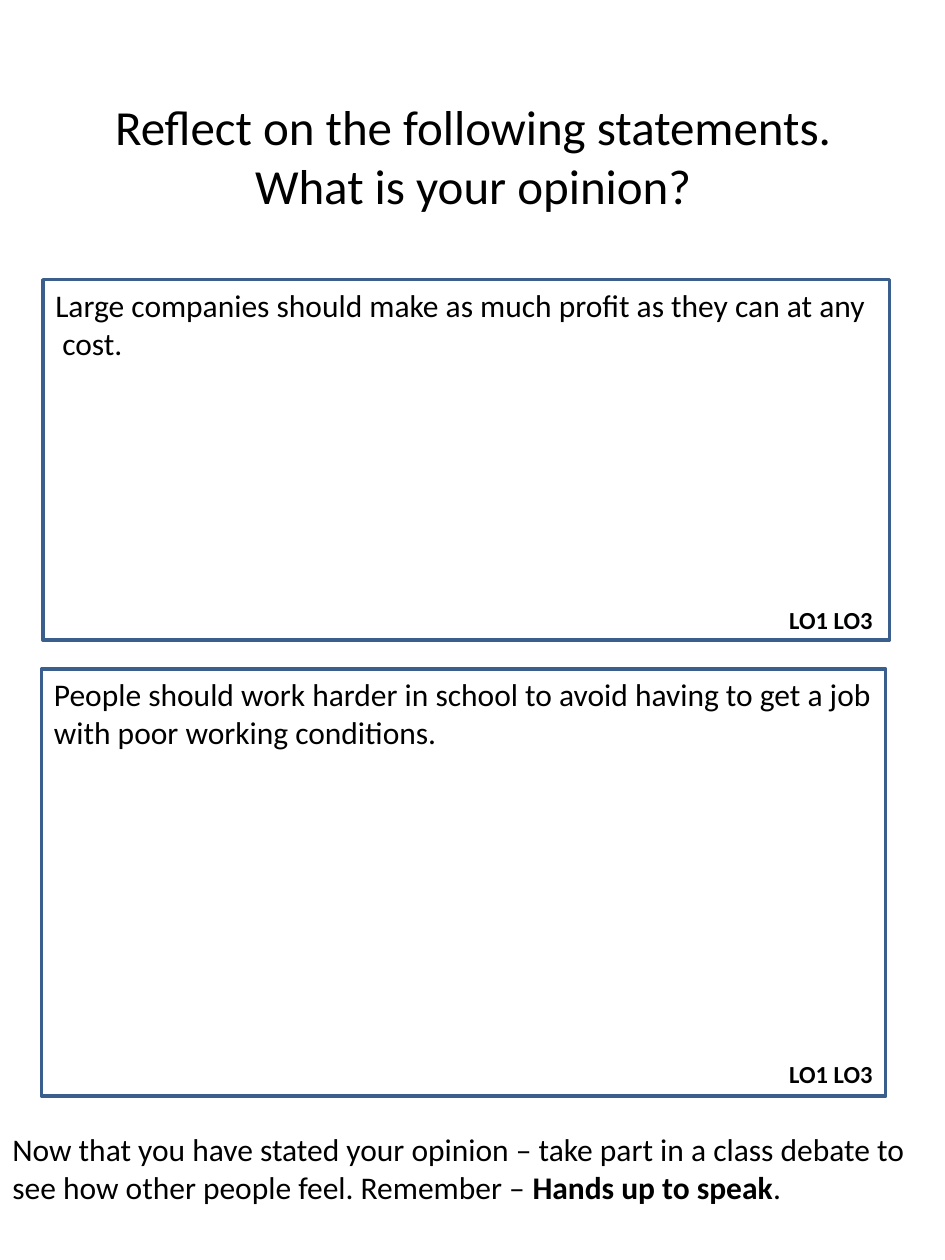
from pptx import Presentation
from pptx.dml.color import RGBColor
from pptx.enum import shapes, text
from pptx.util import Inches, Pt

COLORS = {"border": "3A5F8C", "ink": "000000"}
FONT = "Calibri"
TAG_LEFT, TAG_WIDTH, TAG_HEIGHT = 6.16, 0.87, 0.34

# frame box, statement lines, top of the tag
STATEMENTS = [
    ((0.34, 2.22, 6.72, 2.86),
     ["Large companies should make as much profit as they can at any",
      " cost."], 4.75),
    ((0.33, 5.31, 6.7, 3.39),
     ["People should work harder in school to avoid having to get a job",
      "with poor working conditions."], 8.36),
]
CLOSING = [
    [("Now that you have stated your opinion – take part in a class debate to", False)],
    [("see how other people feel. Remember – ", False),
     ("Hands up to speak", True), (".", False)],
]


def inches(box):
    return [Inches(v) for v in box]


def format_run(r, size, bold=False):
    r.font.name = FONT
    r.font.size = Pt(size)
    r.font.bold = bold
    r.font.color.rgb = RGBColor.from_string(COLORS["ink"])


def add_title(slide, box, title):
    sp = slide.shapes.title
    sp.left, sp.top, sp.width, sp.height = inches(box)
    tf = sp.text_frame
    tf.text = title
    tf.word_wrap = True
    tf.vertical_anchor = text.MSO_ANCHOR.MIDDLE
    p = tf.paragraphs[0]
    p.alignment = text.PP_ALIGN.CENTER
    format_run(p.runs[0], 28)


def add_frame(slide, box):
    sp = slide.shapes.add_shape(shapes.MSO_SHAPE.RECTANGLE, *inches(box))
    sp.shadow.inherit = False
    sp.fill.background()
    sp.line.color.rgb = RGBColor.from_string(COLORS["border"])
    sp.line.width = Pt(2)


def add_text(slide, box, lines, size=18, align=text.PP_ALIGN.LEFT):
    """Add a text box; each line is a list of (wording, bold) pairs."""
    tf = slide.shapes.add_textbox(*inches(box)).text_frame
    tf.word_wrap = False
    for i, line in enumerate(lines):
        p = tf.add_paragraph() if i else tf.paragraphs[0]
        p.alignment = align
        for wording, bold in line:
            r = p.add_run()
            r.text = wording
            format_run(r, size, bold)


def add_statement(slide, box, lines, tag_top):
    left, top, width, _ = box
    add_frame(slide, box)
    add_text(slide, (left, top, width, 0.71), [[(line, False)] for line in lines])
    add_text(slide, (TAG_LEFT, tag_top, TAG_WIDTH, TAG_HEIGHT),
             [[("LO1 LO3", True)]], 14, text.PP_ALIGN.CENTER)


def main():
    prs = Presentation()
    prs.slide_width, prs.slide_height = Inches(7.5), Inches(10)
    slide = prs.slides.add_slide(prs.slide_layouts[5])
    add_title(slide, (0.38, 0.4, 6.75, 1.67),
              "Reflect on the following statements. What is your opinion?")
    for box, lines, tag_top in STATEMENTS:
        add_statement(slide, box, lines, tag_top)
    add_text(slide, (0, 8.92, 7.43, 0.71), CLOSING)
    prs.save("out.pptx")


if __name__ == "__main__":
    main()
